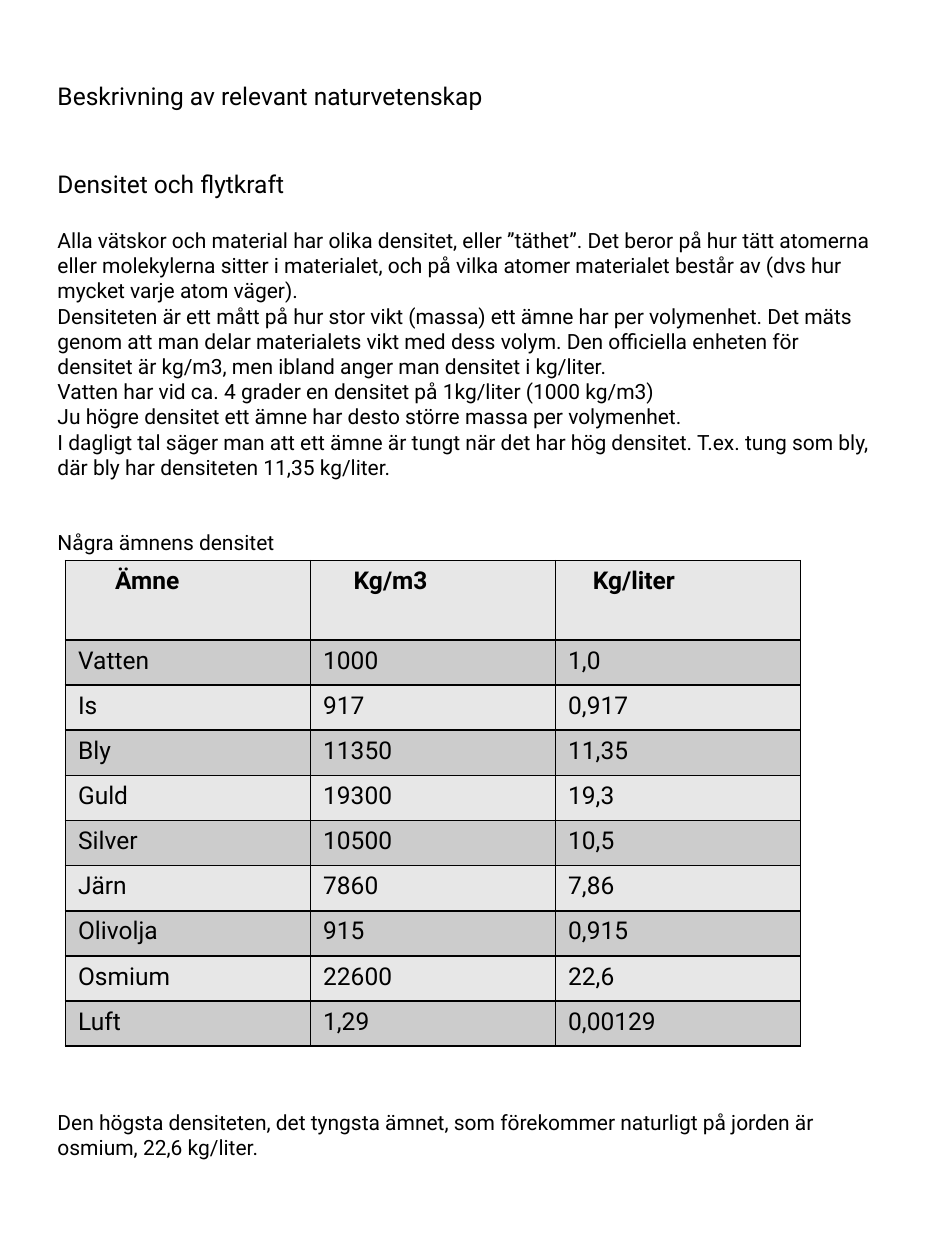
from pptx import Presentation
from pptx import util as u
from pptx.dml.color import RGBColor
from pptx.enum import text
from pptx.oxml import parse_xml
from pptx.oxml.ns import nsdecls

TEXTS = [
    ("Beskrivning av relevant naturvetenskap", 14, 0),
    ("Densitet och flytkraft", 14, 33.6),
    ("Alla vätskor och material har olika densitet, eller ”täthet”. Det beror på hur tätt "
     "atomerna eller molekylerna sitter i materialet, och på vilka atomer materialet består "
     "av (dvs hur mycket varje atom väger).", 12, 16.8),
    ("Densiteten är ett mått på hur stor vikt (massa) ett ämne har per volymenhet. Det mäts "
     "genom att man delar materialets vikt med dess volym. Den officiella enheten för "
     "densitet är kg/m3, men ibland anger man densitet i kg/liter.", 12, 0),
    ("Vatten har vid ca. 4 grader en densitet på 1kg/liter (1000 kg/m3)", 12, 0),
    ("Ju högre densitet ett ämne har desto större massa per volymenhet.", 12, 0),
    ("I dagligt tal säger man att ett ämne är tungt när det har hög densitet. T.ex. tung "
     "som bly, där bly har densiteten 11,35 kg/liter.", 12, 0),
    ("Några ämnens densitet", 12, 28.8),
    ("Den högsta densiteten, det tyngsta ämnet, som förekommer naturligt på jorden är "
     "osmium, 22,6 kg/liter.", 12, 316.5),
]

ROWS = [
    ("Ämne", "Kg/m3", "Kg/liter"),
    ("Vatten", "1000", "1,0"),
    ("Is", "917", "0,917"),
    ("Bly", "11350", "11,35"),
    ("Guld", "19300", "19,3"),
    ("Silver", "10500", "10,5"),
    ("Järn", "7860", "7,86"),
    ("Olivolja", "915", "0,915"),
    ("Osmium", "22600", "22,6"),
    ("Luft", "1,29", "0,00129"),
]
INDENTS = (0.75, 0.62, 0.5)


def color(code):
    return RGBColor.from_string(code)


class Page:
    face = "Roboto"
    ink = "000000"
    bands = ("E7E7E7", "CCCCCC")

    def __init__(self, slide):
        self.slide = slide

    def style(self, para, size, bold=False):
        para.font.name = self.face
        para.font.size = u.Pt(size)
        para.font.bold = bold
        para.font.color.rgb = color(self.ink)

    def prose(self, x, y, w, h, items):
        box = self.slide.shapes.add_textbox(u.Cm(x), u.Cm(y), u.Cm(w), u.Cm(h))
        frame = box.text_frame
        frame.word_wrap = True
        frame.vertical_anchor = text.MSO_ANCHOR.TOP
        for i, (words, size, gap) in enumerate(items):
            para = frame.add_paragraph() if i else frame.paragraphs[0]
            para.text = words
            if gap:
                para.space_before = u.Pt(gap)
            self.style(para, size)

    def border(self, cell):
        props = cell._tc.get_or_add_tcPr()
        for i, side in enumerate(("lnL", "lnR", "lnT", "lnB")):
            props.insert(i, parse_xml(
                f'<a:{side} {nsdecls("a")} w="12700"><a:solidFill>'
                f'<a:srgbClr val="{self.ink}"/></a:solidFill></a:{side}>'))

    def table(self, x, y, width, head, height, rows, indents):
        count = len(rows[0])
        shape = self.slide.shapes.add_table(
            len(rows), count, u.Cm(x), u.Cm(y), u.Cm(width * count),
            u.Cm(head + height * (len(rows) - 1)))
        grid = shape.table
        grid.first_row = grid.horz_banding = False
        for col in grid.columns:
            col.width = u.Cm(width)
        for r, row in enumerate(rows):
            grid.rows[r].height = u.Cm(height if r else head)
            for c, words in enumerate(row):
                cell = grid.cell(r, c)
                cell.text = words
                cell.fill.solid()
                cell.fill.fore_color.rgb = color(self.bands[r % 2])
                if r == 0:
                    cell.margin_left = u.Cm(0.25 + indents[c])
                self.style(cell.text_frame.paragraphs[0], 14, r == 0)
                self.border(cell)


def main():
    deck = Presentation()
    deck.slide_width = u.Cm(19.05)
    deck.slide_height = u.Cm(25.4)
    page = Page(deck.slides.add_slide(deck.slide_layouts[6]))
    page.prose(0.91, 1.5, 17, 25.9, TEXTS)
    page.table(1.32, 11.3, 4.94, 1.6, 0.91, ROWS, INDENTS)
    deck.save("out.pptx")


if __name__ == "__main__":
    main()
